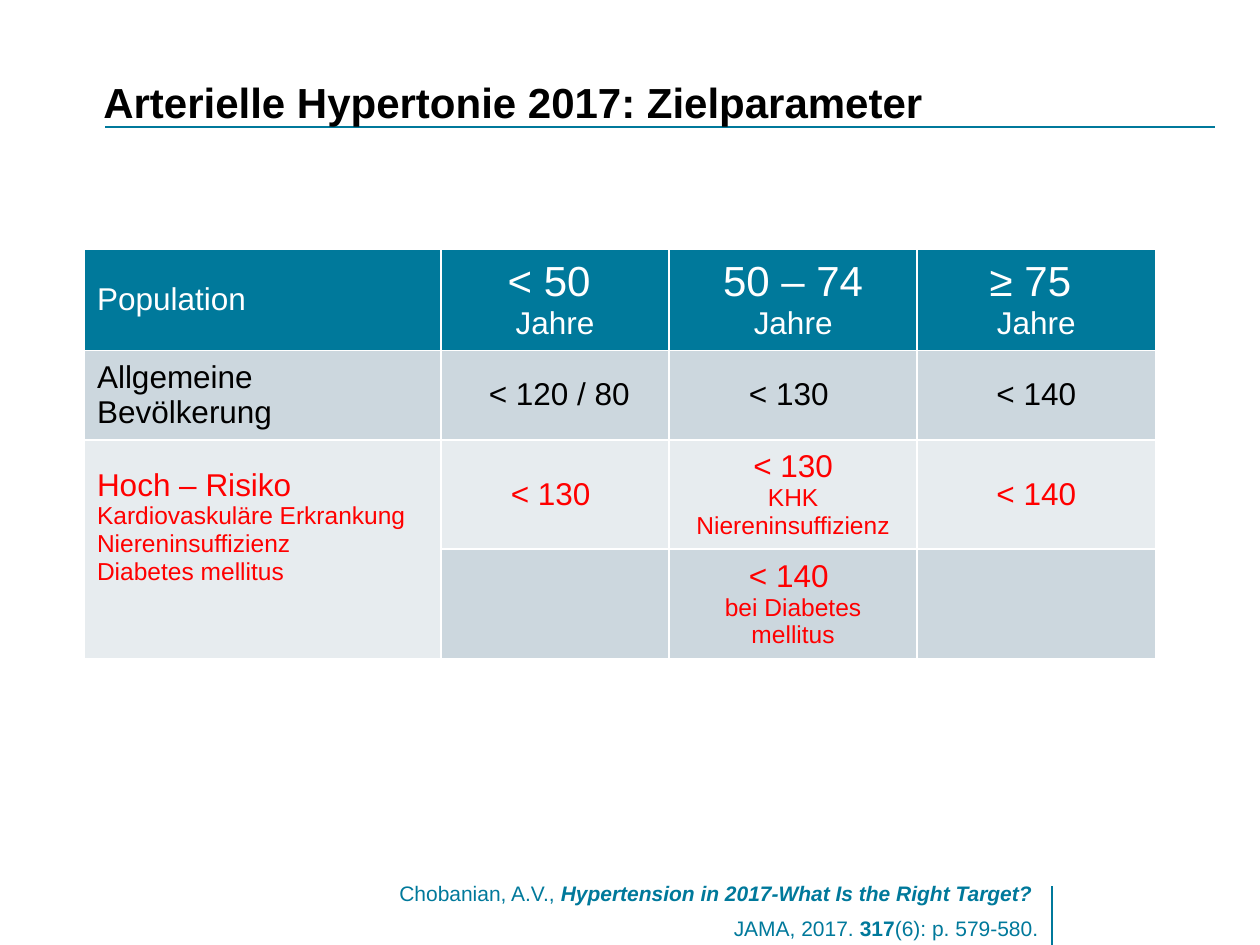
import pptx
import pptx.util
import pptx.dml.color
import pptx.enum.shapes
import pptx.enum.text
import pptx.oxml
import pptx.oxml.ns

TEAL = pptx.dml.color.RGBColor(0x00, 0x79, 0x9B)
WHITE = pptx.dml.color.RGBColor(0xFF, 0xFF, 0xFF)
BLACK = pptx.dml.color.RGBColor(0x00, 0x00, 0x00)
RED = pptx.dml.color.RGBColor(0xFF, 0x00, 0x00)
MIST = pptx.dml.color.RGBColor(0xCC, 0xD7, 0xDE)
PALE = pptx.dml.color.RGBColor(0xE7, 0xEC, 0xEF)

GRID_COLUMNS, GRID_ROWS = 100, 75
SLIDE_WIDTH, SLIDE_HEIGHT = pptx.util.Inches(10), pptx.util.Inches(7.5)
LEFT = pptx.enum.text.PP_ALIGN.LEFT
CENTER = pptx.enum.text.PP_ALIGN.CENTER
RIGHT = pptx.enum.text.PP_ALIGN.RIGHT
TOP = pptx.enum.text.MSO_ANCHOR.TOP
MIDDLE = pptx.enum.text.MSO_ANCHOR.MIDDLE
BOTTOM = pptx.enum.text.MSO_ANCHOR.BOTTOM

COLUMN_WIDTHS = (28.3, 18.1, 19.7, 18.9)
ROW_HEIGHTS = (7.9, 7.1, 8.65, 8.65)
TARGETS = (
    (TEAL, WHITE, (
        [("Population", 18)],
        [("< 50 ", 24), ("Jahre", 18)],
        [("50 – 74", 24), ("Jahre", 18)],
        [("≥ 75 ", 24), ("Jahre", 18)],
    )),
    (MIST, BLACK, (
        [("Allgemeine Bevölkerung", 18)],
        [(" < 120 / 80", 18)],
        [("< 130 ", 18)],
        [("< 140", 18)],
    )),
    (PALE, RED, (
        [("Hoch – Risiko", 18), ("Kardiovaskuläre Erkrankung", 14),
         ("Niereninsuffizienz", 14), ("Diabetes mellitus", 14)],
        [("< 130 ", 18)],
        [("< 130", 18), ("KHK", 14), ("Niereninsuffizienz", 14)],
        [("< 140", 18)],
    )),
    (MIST, RED, (
        [],
        [],
        [("< 140 ", 18), ("bei Diabetes mellitus", 14)],
        [],
    )),
)


def across(columns):
    return round(SLIDE_WIDTH * columns / GRID_COLUMNS)


def down(rows):
    return round(SLIDE_HEIGHT * rows / GRID_ROWS)


def add_span(para, text, size=18, color=BLACK, bold=False, italic=False):
    span = para.add_run()
    span.text = text
    span.font.name = "Arial"
    span.font.size = pptx.util.Pt(size)
    span.font.color.rgb = color
    span.font.bold = bold
    span.font.italic = italic


def write_text(frame, paragraphs, align=LEFT, color=BLACK, spacing=1.0, before=0):
    for index, spans in enumerate(paragraphs):
        para = frame.add_paragraph() if index else frame.paragraphs[0]
        para.alignment = align
        para.line_spacing = spacing
        para.space_before = pptx.util.Pt(before if index else 0)
        for text, style in spans:
            add_span(para, text, color=color, **style)


def add_text_box(page, left, top, width, height, paragraphs, anchor=TOP, inset=None, **style):
    box = page.shapes.add_textbox(across(left), down(top), across(width), down(height))
    frame = box.text_frame
    frame.word_wrap = True
    frame.vertical_anchor = anchor
    if inset is not None:
        frame.margin_left = frame.margin_right = inset
        frame.margin_top = frame.margin_bottom = inset
    write_text(frame, paragraphs, **style)


def add_rule(page, start, end, width):
    rule = page.shapes.add_connector(
        pptx.enum.shapes.MSO_CONNECTOR.STRAIGHT,
        across(start[0]), down(start[1]), across(end[0]), down(end[1]))
    rule.line.color.rgb = TEAL
    rule.line.width = pptx.util.Pt(width)
    pptx.oxml.ns.qn("a:effectLst")
    rule._element.spPr.append(pptx.oxml.parse_xml(
        f'<a:effectLst {pptx.oxml.ns.nsdecls("a")}/>'))


def add_borders(cell):
    properties = cell._tc.get_or_add_tcPr()
    for side in ("lnL", "lnR", "lnT", "lnB"):
        properties.append(pptx.oxml.parse_xml(
            f'<a:{side} {pptx.oxml.ns.nsdecls("a")} w="{pptx.util.Pt(1)}">'
            f'<a:solidFill><a:srgbClr val="{WHITE}"/></a:solidFill></a:{side}>'))


def format_cell(cell, lines, fill, color, align):
    add_borders(cell)
    cell.fill.solid()
    cell.fill.fore_color.rgb = fill
    cell.vertical_anchor = MIDDLE
    paragraphs = [[(text, {"size": size})] for text, size in lines]
    write_text(cell.text_frame, paragraphs, align=align, color=color)


def add_target_table(page, left, top):
    table = page.shapes.add_table(
        len(ROW_HEIGHTS), len(COLUMN_WIDTHS), across(left), down(top),
        across(sum(COLUMN_WIDTHS)), down(sum(ROW_HEIGHTS))).table
    for column, width in zip(table.columns, COLUMN_WIDTHS):
        column.width = across(width)
    for row, height in zip(table.rows, ROW_HEIGHTS):
        row.height = down(height)
    for row, (fill, color, entries) in enumerate(TARGETS):
        for column, lines in enumerate(entries):
            align = CENTER if column else LEFT
            format_cell(table.cell(row, column), lines, fill, color, align)
    risk = table.cell(2, 0)
    risk.merge(table.cell(3, 0))
    risk.margin_bottom = down(4.1)


def main():
    deck = pptx.Presentation()
    deck.slide_width, deck.slide_height = SLIDE_WIDTH, SLIDE_HEIGHT
    page = deck.slides.add_slide(deck.slide_layouts[6])
    add_rule(page, (96.4, 10.1), (8.3, 10.1), 1)
    add_rule(page, (83.5, 75), (83.5, 70.3), 0.75)
    title = [[("Arterielle Hypertonie 2017: Zielparameter", {"size": 24, "bold": True})]]
    add_text_box(page, 8.2, 2.6, 82.7, 7.5, title, anchor=BOTTOM, inset=0)
    plain = {"size": 12}
    strong = {"size": 12, "bold": True}
    citation = [
        [("Chobanian, A.V., ", plain),
         ("Hypertension in 2017-What Is the Right Target? ", {**strong, "italic": True})],
        [("JAMA, 2017. ", plain), ("317", strong), ("(6): p. 579-580.", plain)],
    ]
    add_text_box(page, 23.3, 69.2, 60.1, 5.9, citation,
                 align=RIGHT, color=TEAL, spacing=1.1, before=4)
    add_target_table(page, 6.7, 19.8)
    deck.save("out.pptx")


if __name__ == "__main__":
    main()
